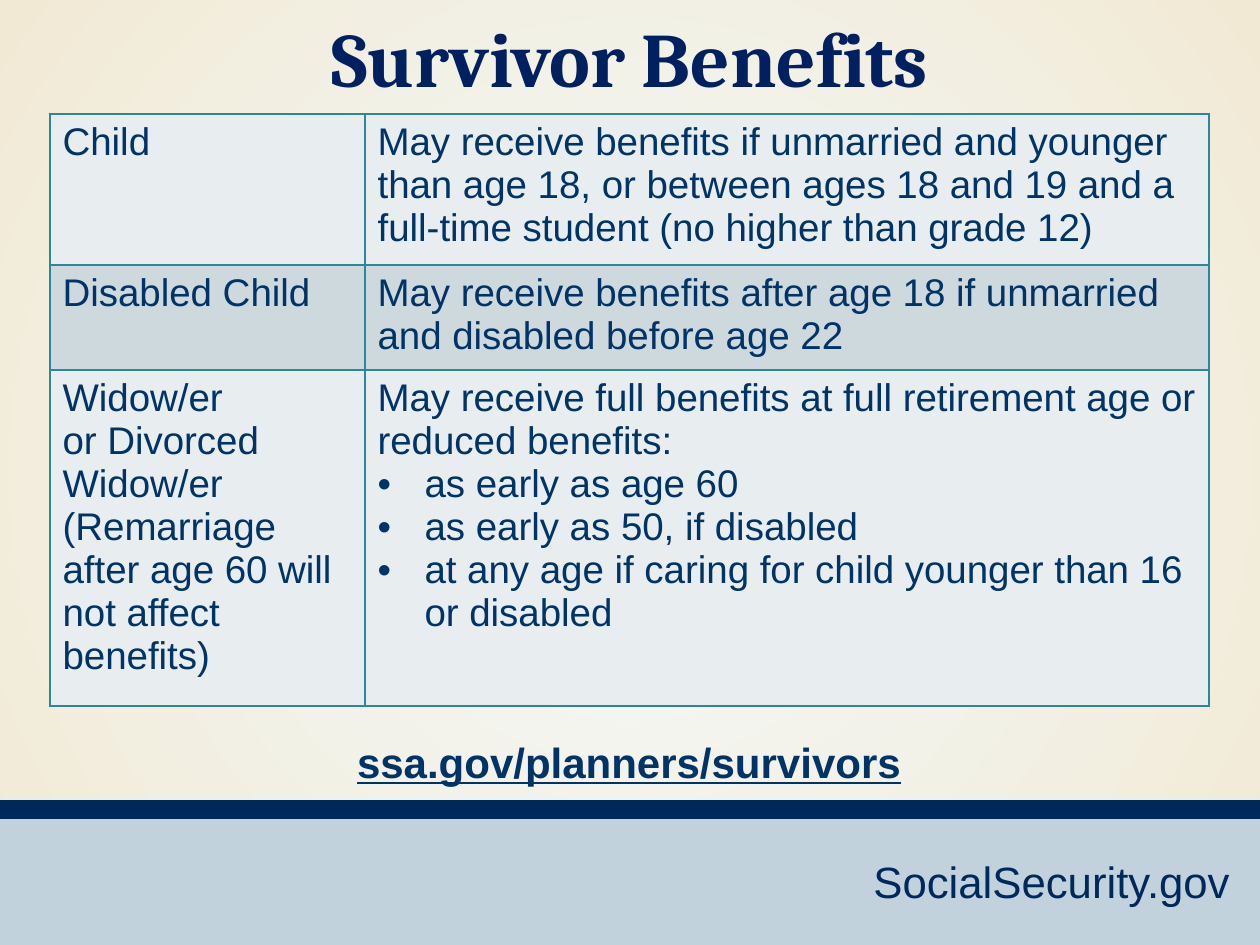
from dataclasses import dataclass

from lxml.etree import SubElement
from pptx import Presentation
from pptx.dml.color import RGBColor
from pptx.enum.shapes import MSO_SHAPE
from pptx.enum.text import MSO_ANCHOR, PP_ALIGN
from pptx.oxml import parse_xml
from pptx.oxml.ns import nsdecls, qn
from pptx.util import Emu, Pt

NAVY, TEXT, BORDER = "00295B", "003366", "31859B"
LIGHT, BAND = "E8EDEF", "CED9DE"
BULLET = "• "


@dataclass
class Box:
    x: int
    y: int
    w: int
    h: int

    def emu(self) -> tuple:
        """Return left, top, width and height in EMU."""
        return tuple(px(v) for v in (self.x, self.y, self.w, self.h))


@dataclass
class Font:
    size: int
    color: str
    name: str = "Arial"
    bold: bool = False
    underline: bool = False


@dataclass
class Row:
    height: int
    fill: str
    cells: tuple


ROWS = [
    Row(142, LIGHT, (
        ["Child"],
        ["May receive benefits if unmarried and younger than age 18, or between "
         "ages 18 and 19 and a full-time student (no higher than grade 12)"])),
    Row(104, BAND, (
        ["Disabled Child"],
        ["May receive benefits after age 18 if unmarried and disabled before age 22"])),
    Row(314, LIGHT, (
        ["Widow/er", "or Divorced Widow/er",
         "(Remarriage after age 60 will not affect benefits)"],
        ["May receive full benefits at full retirement age or reduced benefits:",
         BULLET + "as early as age 60",
         BULLET + "as early as 50, if disabled",
         BULLET + "at any age if caring for child younger than 16 or disabled"])),
]


def px(n: int) -> Emu:
    """Convert pixels to EMU."""
    return Emu(round(n * 914400 / 126))


def rgb(color: str) -> RGBColor:
    """Convert a hex string to a colour."""
    return RGBColor.from_string(color)


def style(p, font: Font, align=PP_ALIGN.LEFT) -> None:
    """Align a paragraph and format its runs."""
    p.alignment = align
    for r in p.runs:
        f = r.font
        f.name, f.size = font.name, Pt(font.size)
        f.bold, f.underline = font.bold, font.underline
        f.color.rgb = rgb(font.color)


def paint_background(s, center: str, edge: str) -> None:
    """Fill the background with a radial gradient."""
    fill = s.background.fill
    fill.gradient()
    for stop, color in zip(fill.gradient_stops, (center, edge)):
        stop.color.rgb = rgb(color)
    grad = next(s.element.iter(qn("a:gradFill")))
    grad.replace(grad.find(qn("a:lin")), parse_xml(
        f'<a:path {nsdecls("a")} path="circle">'
        '<a:fillToRect l="50000" t="50000" r="50000" b="50000"/></a:path>'))


def add_bar(s, box: Box, color: str) -> None:
    """Add a plain rectangle."""
    sp = s.shapes.add_shape(MSO_SHAPE.RECTANGLE, *box.emu())
    sp.shadow.inherit = False
    sp.fill.solid()
    sp.fill.fore_color.rgb = rgb(color)
    sp.line.fill.background()


def add_text(s, box: Box, text: str, font: Font, align=PP_ALIGN.LEFT) -> None:
    """Add a one-line text box."""
    tf = s.shapes.add_textbox(*box.emu()).text_frame
    tf.word_wrap = True
    tf.text = text
    style(tf.paragraphs[0], font, align)


def set_title(s, box: Box, text: str, font: Font) -> None:
    """Place and format the title placeholder."""
    sp = s.shapes.title
    sp.left, sp.top, sp.width, sp.height = box.emu()
    tf = sp.text_frame
    tf.text = text
    tf.vertical_anchor = MSO_ANCHOR.TOP
    tf.margin_top, tf.margin_bottom = px(10), 0
    style(tf.paragraphs[0], font, PP_ALIGN.CENTER)


def fill_cell(cell, lines: list, fill: str, font: Font) -> None:
    """Write, fill and outline one table cell."""
    cell.fill.solid()
    cell.fill.fore_color.rgb = rgb(fill)
    tc_pr = cell._tc.get_or_add_tcPr()
    for i, side in enumerate("LRTB"):
        tc_pr.insert(i, parse_xml(
            f'<a:ln{side} {nsdecls("a")} w="12700"><a:solidFill>'
            f'<a:srgbClr val="{BORDER}"/></a:solidFill></a:ln{side}>'))
    tf = cell.text_frame
    tf.text = "\n".join(line.removeprefix(BULLET) for line in lines)
    for p, line in zip(tf.paragraphs, lines):
        if line.startswith(BULLET):
            p_pr = p._p.get_or_add_pPr()
            p_pr.set("marL", str(px(47)))
            p_pr.set("indent", str(-px(47)))
            SubElement(p_pr, qn("a:buFont")).set("typeface", "Arial")
            SubElement(p_pr, qn("a:buChar")).set("char", BULLET.strip())
        style(p, font)


def add_benefits(s, box: Box, widths: tuple, rows: list, font: Font) -> None:
    """Add the benefits table."""
    table = s.shapes.add_table(len(rows), len(widths), *box.emu()).table
    table.first_row = table.horz_banding = False
    for col, width in zip(table.columns, widths):
        col.width = px(width)
    for i, row in enumerate(rows):
        table.rows[i].height = px(row.height)
        for j, lines in enumerate(row.cells):
            fill_cell(table.cell(i, j), lines, row.fill, font)


def main() -> None:
    """Build and save the slide."""
    prs = Presentation()
    prs.slide_width, prs.slide_height = px(1260), px(945)
    s = prs.slides.add_slide(prs.slide_layouts[5])
    paint_background(s, "F3FAFB", "F2E9D5")
    add_bar(s, Box(0, 812, 1260, 133), "C1D2DC")
    add_bar(s, Box(0, 800, 1260, 19), NAVY)
    add_text(s, Box(861, 849, 387, 66), "SocialSecurity.gov", Font(25, NAVY))
    set_title(s, Box(0, 0, 1260, 92), "Survivor Benefits",
              Font(44, "002060", "Cambria", bold=True))
    add_benefits(s, Box(50, 114, 1159, sum(row.height for row in ROWS)),
                 (315, 844), ROWS, Font(22, TEXT))
    add_text(s, Box(127, 730, 1004, 63), "ssa.gov/planners/survivors",
             Font(24, TEXT, bold=True, underline=True), PP_ALIGN.CENTER)
    prs.save("out.pptx")


if __name__ == "__main__":
    main()
